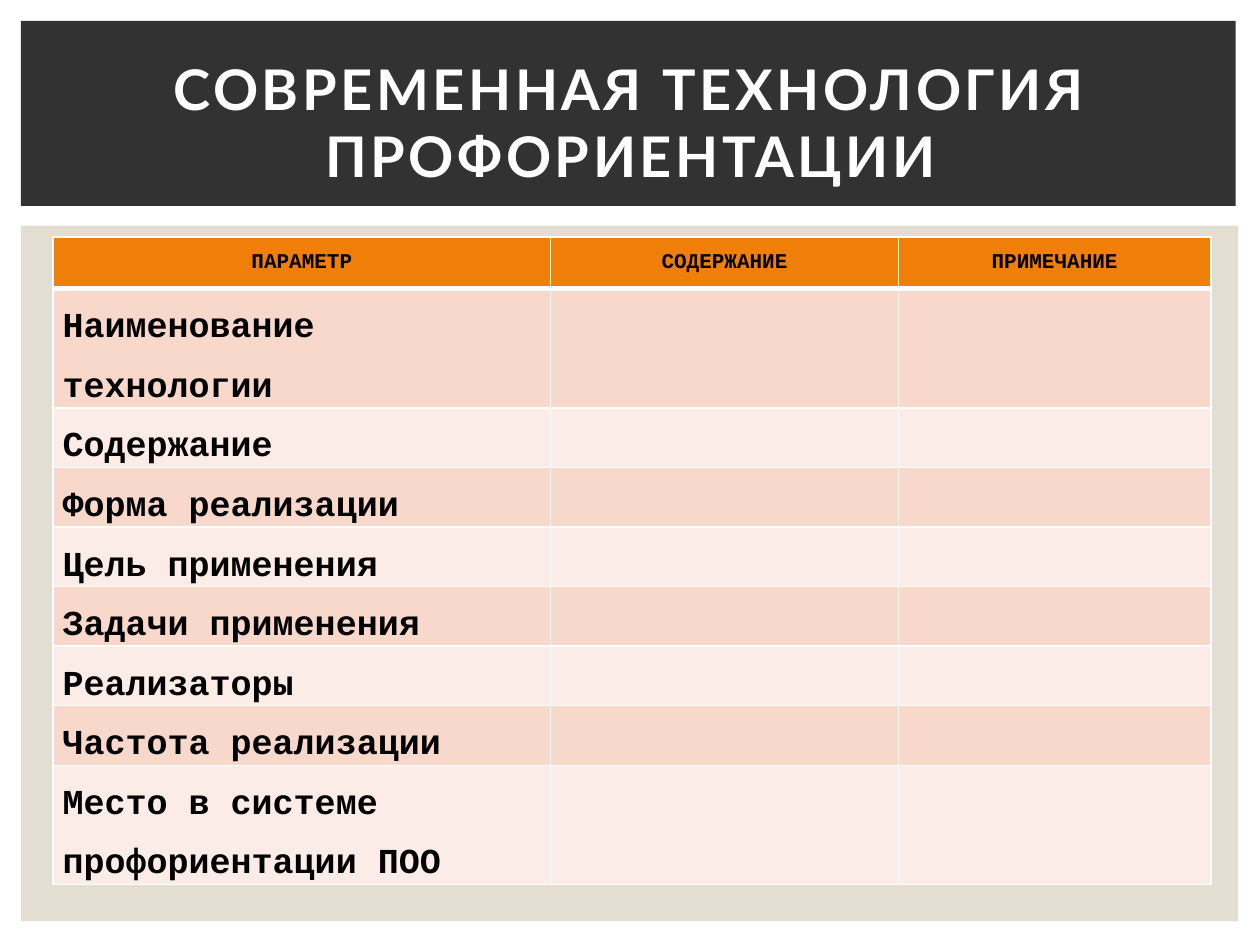
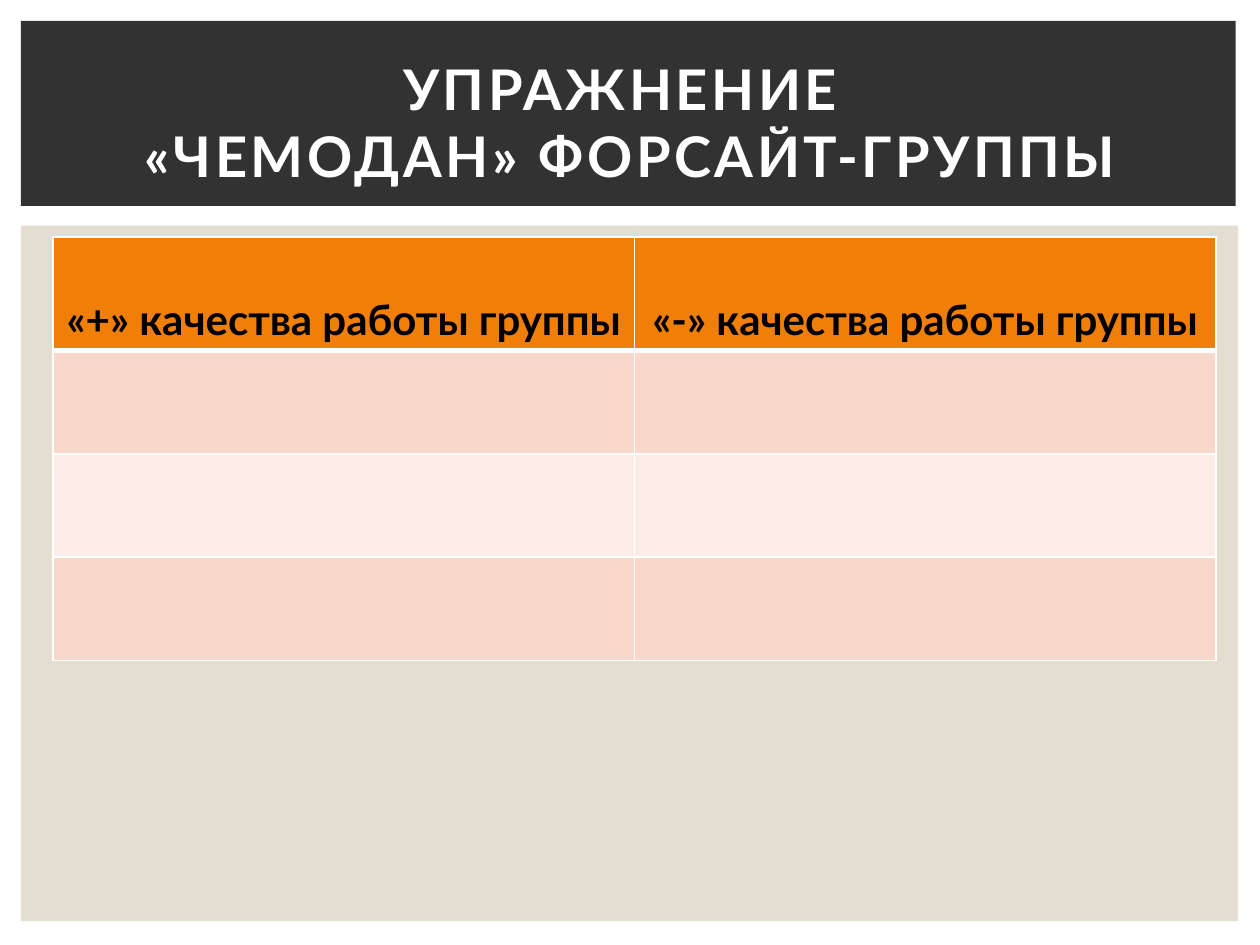
from lxml.etree import SubElement as Sub
from pptx import Presentation
from pptx.dml.color import RGBColor as Rgb
from pptx.enum.shapes import MSO_SHAPE as Shape
from pptx.enum.text import MSO_ANCHOR as Anchor, PP_ALIGN as Align
from pptx.oxml.ns import qn
from pptx.util import Cm, Pt

# Content
SLIDES = [
    {
        "title": "СОВРЕМЕННАЯ ТЕХНОЛОГИЯ ПРОФОРИЕНТАЦИИ",
        "head": ["ПАРАМЕТР", "СОДЕРЖАНИЕ", "ПРИМЕЧАНИЕ"],
        "rows": ["Наименование технологии", "Содержание", "Форма реализации",
                 "Цель применения", "Задачи применения", "Реализаторы",
                 "Частота реализации", "Место в системе профориентации ПОО"],
        "cols": [10.03, 7.01, 6.3],
        "tall": [1.04, 2.4] + [1.2] * 6 + [2.4],
        "font": "Courier New", "size": 12, "before": 10,
        "anchor": Anchor.MIDDLE, "pad": (0.19, 0),
    },
    {
        "title": "УПРАЖНЕНИЕ \v«ЧЕМОДАН» ФОРСАЙТ-ГРУППЫ",
        "head": ["«+» качества работы группы", "«-» качества работы группы"],
        "rows": [""] * 3,
        "cols": [11.72] * 2,
        "tall": [2.29] + [2.08] * 3,
        "font": "Lato", "size": 24, "before": 0,
        "anchor": Anchor.BOTTOM, "pad": (0.25, 0.13),
    },
]

# Shared look
HUES = {"white": "FFFFFF", "black": "000000", "sand": "E3DED1",
        "dark": "323232", "head": "F07F09", "odd": "F9D8CC", "even": "FCECE7"}
BANDS = [("sand", (0.42, 4.55, 24.54, 14.02)),
         ("dark", (0.42, 0.42, 24.49, 3.73))]
TITLE = (1.07, 0.99, 23.29, 2.92)
LEFT, TOP = 1.07, 4.78


def hue(name):
    return Rgb.from_string(HUES[name])


def paint(fill, name):
    fill.solid()
    fill.fore_color.rgb = hue(name)


def style(par, face, size, name):
    for run in par.runs:
        font = run.font
        font.name, font.size, font.bold = face, Pt(size), True
        font.color.rgb = hue(name)


def add_band(slide, name, box):
    band = slide.shapes.add_shape(Shape.RECTANGLE, *map(Cm, box))
    band.shadow.inherit = False
    paint(band.fill, name)
    band.line.fill.background()


def add_title(slide, text):
    frame = slide.shapes.add_textbox(*map(Cm, TITLE)).text_frame
    frame.word_wrap = True
    frame.vertical_anchor = Anchor.MIDDLE
    frame.text = text
    par = frame.paragraphs[0]
    par.alignment = Align.CENTER
    style(par, "Lato", 32, "white")
    for run in par.runs:
        run.font._element.set("spc", "200")


def add_edges(cell, top, low):
    props = cell._tc.get_or_add_tcPr()
    for side, width in (("L", 1), ("R", 1), ("T", top), ("B", low)):
        line = Sub(props, qn("a:ln" + side), w=str(Pt(width)))
        fill = Sub(line, qn("a:solidFill"))
        Sub(fill, qn("a:srgbClr"), val=HUES["white"])


def fill_cell(cell, text, row, data):
    add_edges(cell, 3 if row == 1 else 1, 3 if row == 0 else 1)
    paint(cell.fill, "head" if row == 0 else "odd" if row % 2 else "even")
    if not text:
        return
    across, down = map(Cm, data["pad"])
    cell.margin_left = cell.margin_right = across
    cell.margin_top = cell.margin_bottom = down
    cell.vertical_anchor = data["anchor"]
    cell.text_frame.text = text
    par = cell.text_frame.paragraphs[0]
    if row == 0:
        par.alignment = Align.CENTER
        par.space_before = Pt(data["before"])
    else:
        par.line_spacing = 1.5
        par.space_before = Pt(12)
    style(par, data["font"], 20 if row else data["size"], "black")


def add_grid(slide, data):
    cols, tall = data["cols"], data["tall"]
    grid = slide.shapes.add_table(len(tall), len(cols), Cm(LEFT), Cm(TOP),
                                  Cm(sum(cols)), Cm(sum(tall))).table
    for col, width in zip(grid.columns, cols):
        col.width = Cm(width)
    for row, height in zip(grid.rows, tall):
        row.height = Cm(height)
    # Only the first column of the body holds text
    blanks = [""] * (len(cols) - 1)
    lines = [data["head"]] + [[name] + blanks for name in data["rows"]]
    for r, line in enumerate(lines):
        for c, text in enumerate(line):
            fill_cell(grid.cell(r, c), text, r, data)


def main():
    deck = Presentation()
    deck.slide_width, deck.slide_height = Cm(25.4), Cm(19.05)
    for data in SLIDES:
        slide = deck.slides.add_slide(deck.slide_layouts[6])
        paint(slide.background.fill, "white")
        for name, box in BANDS:
            add_band(slide, name, box)
        add_grid(slide, data)
        add_title(slide, data["title"])
    deck.save("out.pptx")


if __name__ == "__main__":
    main()
